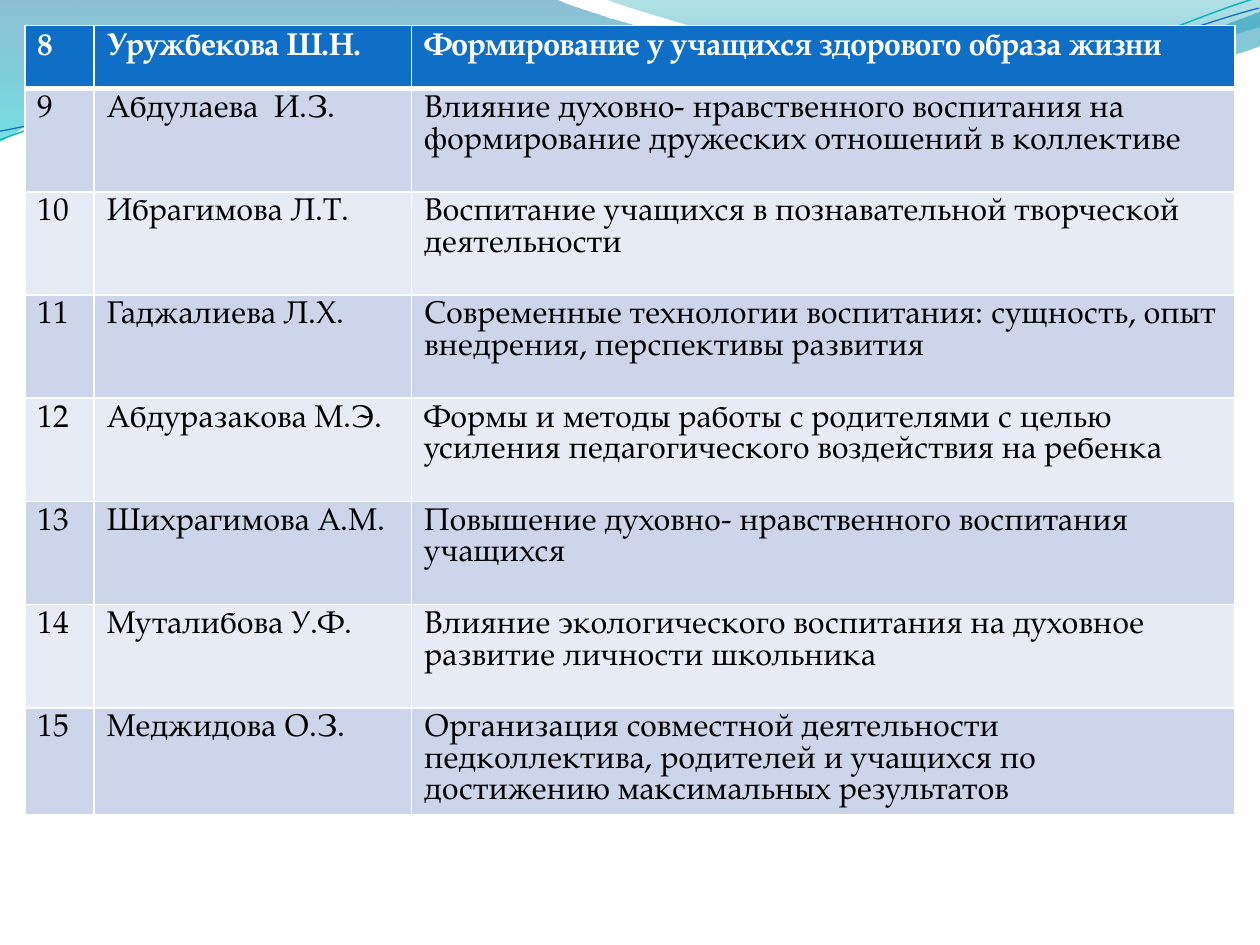
from dataclasses import dataclass

from lxml import etree
from pptx import Presentation
from pptx.dml.color import RGBColor
from pptx.oxml.ns import qn
from pptx.util import Pt


@dataclass(frozen=True)
class Theme:
    font: str = "TeX Gyre Pagella"
    size: float = 18
    leading: float = 18
    header_fill: str = "0F6FC6"
    header_text: str = "FFFFFF"
    band_fills: tuple = ("E7EBF5", "CCD5EA")
    text: str = "000000"
    border: str = "FFFFFF"
    wide_wave: tuple = ((0, "0074A1", 45), (100, "00C6CF", 55))
    right_wave: tuple = ((0, "00A1A9", 30), (80, "008BBF", 45))
    teal_line: str = "0AB8BF"
    blue_line: str = "0F6FC6"


THEME = Theme()
CURVE_ROTATION = 357.3
COLUMN_WIDTHS = (39.6, 181.4, 470.5)
ROW_HEIGHTS = (36, *[59] * 6, 36)
TOPICS = (
    ("8", "Уружбекова Ш.Н.", "Формирование у учащихся здорового образа жизни"),
    ("9", "Абдулаева  И.З.", "Влияние духовно- нравственного воспитания на формирование дружеских отношений в коллективе"),
    ("10", "Ибрагимова Л.Т.", "Воспитание учащихся в познавательной творческой деятельности"),
    ("11", "Гаджалиева Л.Х.", "Современные технологии воспитания: сущность, опыт внедрения, перспективы развития"),
    ("12", "Абдуразакова М.Э.", "Формы и методы работы с родителями с целью усиления педагогического воздействия на ребенка"),
    ("13", "Шихрагимова А.М.", "Повышение духовно- нравственного воспитания учащихся"),
    ("14", "Муталибова У.Ф.", "Влияние экологического воспитания на духовное развитие личности школьника"),
    ("15", "Меджидова О.З.", "Организация совместной деятельности педколлектива, родителей и учащихся по достижению максимальных результатов"),
)

WIDE_WAVE = (
    (0, 0), (317, -0.7),
    (342.7, 12.2, 478.1, 45.4, 545.8, 45.4),
    (614.2, 45.4, 689.8, 18.7, 720, 6.5), (720.7, 25.9),
    (707.8, 31.7, 626.4, 54.7, 537.1, 54),
    (447.8, 54, 275, 20.2, 185, 24.5),
    (92.9, 25.9, 33.1, 59.8, -0.7, 81.4), (0, 0),
)
RIGHT_WAVE = (
    (344.9, -0.7),
    (366.5, 7.9, 491, 44.6, 553.7, 46.8),
    (616.3, 49.7, 691.9, 23, 720, 15.1), (720, 0), (344.9, -0.7),
)
TEAL_CURVE = (
    (0, 47.1),
    (35.2, 35.9, 115.5, 13.6, 201.2, 14.1),
    (286.2, 14.5, 427.3, 51.5, 513.9, 49.1),
    (600.5, 46.6, 677.9, 9.9, 721.6, 0),
)
BLUE_CURVE = (
    (0, 36.4),
    (34.4, 32.2, 119.8, 10.9, 205.6, 11.4),
    (292.1, 11.8, 430.4, 42.2, 517, 39.8),
    (602.9, 38, 679.9, 8.5, 722.2, 0),
)


def bend_segments(shape, segments):
    outline = next(shape._element.iter(qn("a:path")))
    steps = iter(outline.findall(qn("a:lnTo")))
    for segment in segments[1:]:
        step = next(steps)
        if len(segment) == 6:
            step.addprevious(curve := etree.Element(qn("a:cubicBezTo")))
            for part in (step, next(steps), next(steps)):
                curve.append(part[0])
                outline.remove(part)


def add_outline(page, box, segments, close):
    left, top = box
    points = [
        (Pt(left + segment[index]), Pt(top + segment[index + 1]))
        for segment in segments for index in range(0, len(segment), 2)
    ]
    builder = page.shapes.build_freeform(*points[0])
    builder.add_line_segments(points[1:], close=close)
    shape = builder.convert_to_shape()
    bend_segments(shape, segments)
    shape.shadow.inherit = False
    return shape


def add_wave(page, box, segments, stops):
    shape = add_outline(page, box, segments, True)
    shape.line.fill.background()
    shape.fill.gradient()
    shape.fill.gradient_angle = 270
    for stop, (position, color, _) in zip(shape.fill.gradient_stops, stops):
        stop.position = position / 100
        stop.color.rgb = RGBColor.from_string(color)
    colors = list(shape._element.spPr.iter(qn("a:srgbClr")))
    for element, (_, _, opacity) in zip(colors, stops):
        etree.SubElement(element, qn("a:alpha"), val=str(opacity * 1000))


def add_curve(page, box, segments, color, width):
    shape = add_outline(page, box, segments, False)
    shape.rotation = CURVE_ROTATION
    shape.fill.background()
    shape.line.color.rgb = RGBColor.from_string(color)
    shape.line.width = Pt(width)


def add_header_art(page, box):
    left, top = box
    add_wave(page, box, WIDE_WAVE, THEME.wide_wave)
    add_wave(page, box, RIGHT_WAVE, THEME.right_wave)
    add_curve(page, (left - 1.4, top + 15.8), TEAL_CURVE, THEME.teal_line, 0.85)
    add_curve(page, (left - 1.4, top + 21.6), BLUE_CURVE, THEME.blue_line, 0.75)


def set_borders(cell, top, bottom):
    properties = cell._tc.get_or_add_tcPr()
    widths = (("a:lnL", 1), ("a:lnR", 1), ("a:lnT", top), ("a:lnB", bottom))
    for index, (tag, width) in enumerate(widths):
        border = etree.Element(qn(tag), w=str(Pt(width)))
        fill = etree.SubElement(border, qn("a:solidFill"))
        etree.SubElement(fill, qn("a:srgbClr"), val=THEME.border)
        properties.insert(index, border)


def format_cell(cell, text, row):
    header = row == 0
    cell.fill.solid()
    cell.fill.fore_color.rgb = RGBColor.from_string(
        THEME.header_fill if header else THEME.band_fills[row % 2])
    set_borders(cell, 3 if row == 1 else 1, 3 if header else 1)
    cell.text_frame.text = text
    para = cell.text_frame.paragraphs[0]
    para.line_spacing = Pt(THEME.leading)
    font = para.runs[0].font
    font.name = THEME.font
    font.size = Pt(THEME.size)
    font.bold = header
    font.color.rgb = RGBColor.from_string(THEME.header_text if header else THEME.text)


def add_topic_table(page, box):
    left, top = box
    table = page.shapes.add_table(
        len(TOPICS), len(COLUMN_WIDTHS), Pt(left), Pt(top),
        Pt(sum(COLUMN_WIDTHS)), Pt(sum(ROW_HEIGHTS))).table
    for column, width in zip(table.columns, COLUMN_WIDTHS):
        column.width = Pt(width)
    for index, (row, height, topic) in enumerate(zip(table.rows, ROW_HEIGHTS, TOPICS)):
        row.height = Pt(height)
        for cell, text in zip(row.cells, topic):
            format_cell(cell, text, index)


def main():
    deck = Presentation()
    deck.slide_width = Pt(720)
    deck.slide_height = Pt(540)
    page = deck.slides.add_slide(deck.slide_layouts[6])
    add_header_art(page, (0, 0))
    add_topic_table(page, (14.2, 14.6))
    deck.save("out.pptx")


if __name__ == "__main__":
    main()
